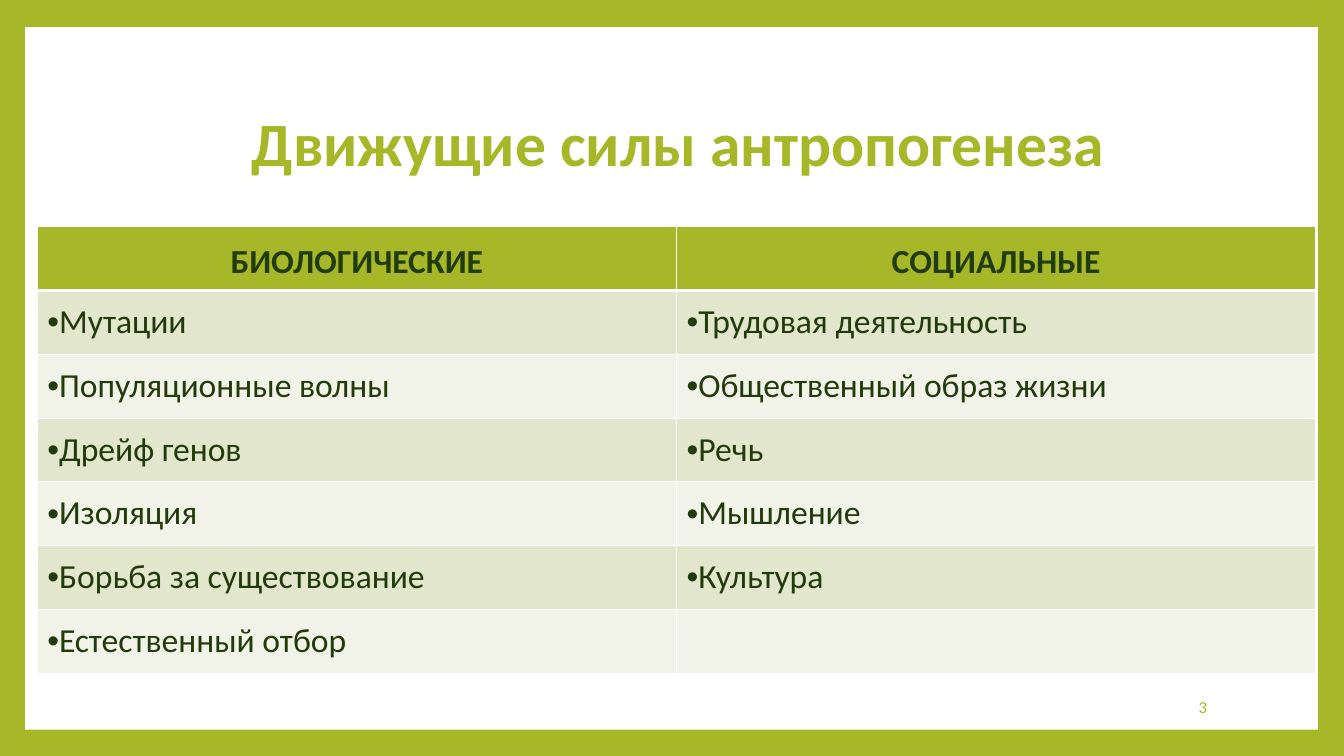
from lxml import etree
from pptx import Presentation
from pptx.dml.color import RGBColor
from pptx.enum import shapes, text
from pptx.oxml import ns
from pptx.util import Inches, Pt

GREEN = RGBColor(0xA6, 0xB7, 0x27)
DARK_GREEN = RGBColor(0x21, 0x3B, 0x0A)
WHITE = RGBColor(0xFF, 0xFF, 0xFF)
BANDS = [RGBColor(0xF1, 0xF3, 0xE8), RGBColor(0xE1, 0xE6, 0xCD)]
FONT = "Calibri"
BULLET_FONT = "Arial"

ROWS = [
    ("БИОЛОГИЧЕСКИЕ", "СОЦИАЛЬНЫЕ"),
    ("Мутации", "Трудовая деятельность"),
    ("Популяционные волны", "Общественный образ жизни"),
    ("Дрейф генов", "Речь"),
    ("Изоляция", "Мышление"),
    ("Борьба за существование", "Культура"),
    ("Естественный отбор", ""),
]


def style(paragraph, size, color, alignment, bold=False):
    paragraph.alignment = alignment
    paragraph.font.name = FONT
    paragraph.font.size = Pt(size)
    paragraph.font.bold = bold
    paragraph.font.color.rgb = color


def add_border(cell, side, width):
    properties = cell._tc.get_or_add_tcPr()
    line = etree.SubElement(properties, ns.qn(f"a:ln{side}"), w=str(Pt(width)))
    fill = etree.SubElement(line, ns.qn("a:solidFill"))
    etree.SubElement(fill, ns.qn("a:srgbClr"), val=str(WHITE))


presentation = Presentation()
presentation.slide_width = Inches(13.33)
presentation.slide_height = Inches(7.5)
slide = presentation.slides.add_slide(presentation.slide_layouts[5])
slide.background.fill.solid()
slide.background.fill.fore_color.rgb = GREEN

# White panel behind the title
panel = slide.shapes.add_shape(
    shapes.MSO_SHAPE.RECTANGLE, Inches(0.25), Inches(0.27), Inches(12.82), Inches(6.97))
panel.shadow.inherit = False
panel.fill.solid()
panel.fill.fore_color.rgb = WHITE
panel.line.fill.background()

title = slide.shapes.title
panel._element.addnext(title._element)
title.left, title.top = Inches(0.13), Inches(0.55)
title.width, title.height = Inches(13.2), Inches(1.81)
title.text_frame.text = "Движущие силы антропогенеза"
title.text_frame.vertical_anchor = text.MSO_ANCHOR.MIDDLE
title.text_frame.paragraphs[0].line_spacing = 0.9
style(title.text_frame.paragraphs[0], 44, GREEN, text.PP_ALIGN.CENTER, bold=True)

# Table of driving forces
table = slide.shapes.add_table(
    len(ROWS), 2, Inches(0.37), Inches(2.25), Inches(12.68), Inches(4.43)).table
for row_index, row in enumerate(ROWS):
    is_header = row_index == 0
    for column_index, force in enumerate(row):
        cell = table.cell(row_index, column_index)
        for side in "LRTB":
            thick = (is_header and side == "B") or (row_index == 1 and side == "T")
            add_border(cell, side, 3 if thick else 1)
        cell.fill.solid()
        cell.fill.fore_color.rgb = GREEN if is_header else BANDS[row_index % 2]
        if not force:
            continue
        cell.text = force
        paragraph = cell.text_frame.paragraphs[0]
        paragraph.line_spacing = 1.15
        paragraph.space_before = Pt(6)
        paragraph.space_after = Pt(10)
        if is_header:
            cell.vertical_anchor = text.MSO_ANCHOR.MIDDLE
            style(paragraph, 24, DARK_GREEN, text.PP_ALIGN.CENTER, bold=True)
        else:
            style(paragraph, 24, DARK_GREEN, text.PP_ALIGN.JUSTIFY)
            properties = paragraph._p.get_or_add_pPr()
            properties.set("marL", "0")
            properties.set("indent", str(Inches(-0.5)))
            run_defaults = properties.find(ns.qn("a:defRPr"))
            run_defaults.addprevious(etree.Element(ns.qn("a:buFont"), typeface=BULLET_FONT))
            run_defaults.addprevious(etree.Element(ns.qn("a:buChar"), char="•"))

slide_number = slide.shapes.add_textbox(
    Inches(10.2), Inches(6.81), Inches(1.87), Inches(0.4))
slide_number.text_frame.word_wrap = True
slide_number.text_frame.vertical_anchor = text.MSO_ANCHOR.MIDDLE
slide_number.text_frame.text = "3"
style(slide_number.text_frame.paragraphs[0], 12, GREEN, text.PP_ALIGN.RIGHT)

presentation.save("out.pptx")
